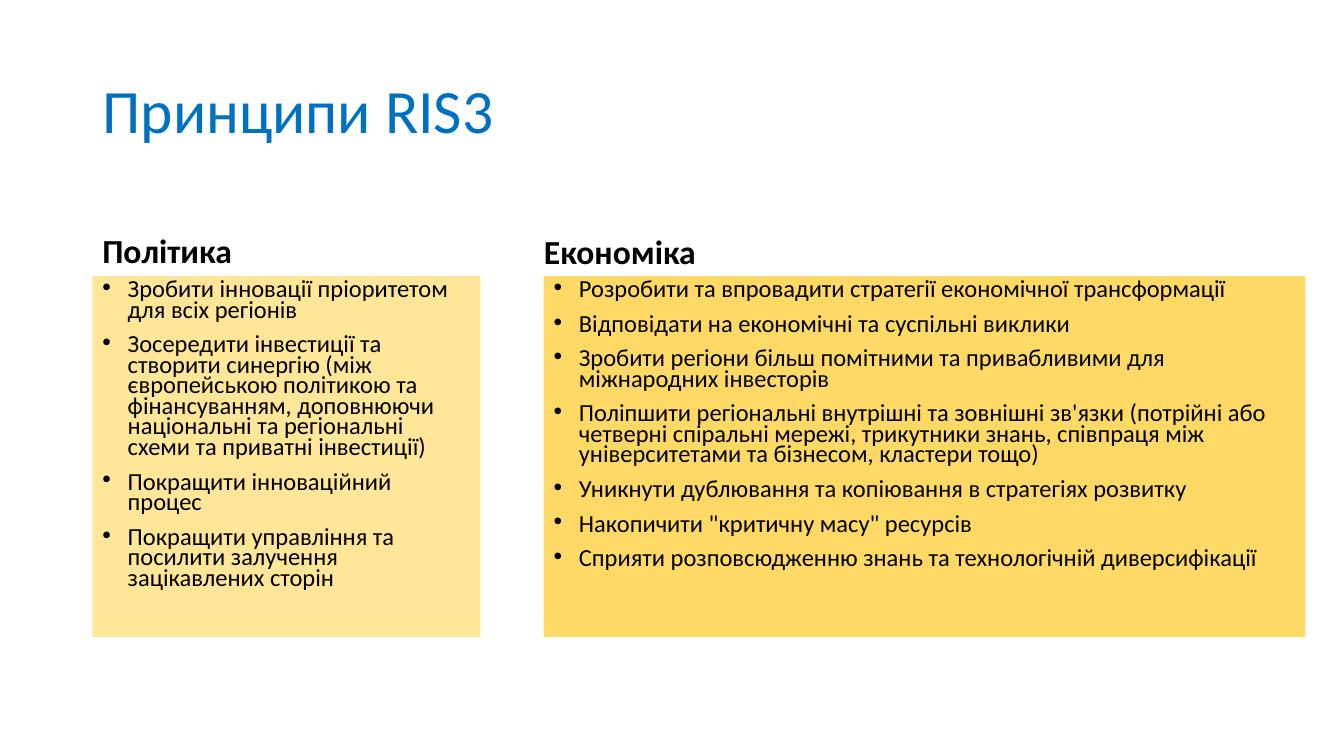
from lxml.etree import SubElement
from pptx import Presentation
from pptx.dml.color import RGBColor
from pptx.enum.shapes import MSO_SHAPE
from pptx.enum.text import MSO_ANCHOR, PP_ALIGN
from pptx.oxml.ns import qn
from pptx.util import Cm, Pt

TITLE = "Принципи RIS3"
COLORS = {"title": "0070C0", "text": "000000", "policy": "FFE699", "economy": "FFD966"}
COLUMNS = [
    {
        "heading": "Політика",
        "heading_left": 2.33,
        "heading_width": 14.33,
        "left": 2.33,
        "width": 9.78,
        "fill": "policy",
        "spacing": 0.9,
        "points": [
            "Зробити інновації пріоритетом для всіх регіонів",
            "Зосередити інвестиції та створити синергію (між європейською політикою та "
            "фінансуванням, доповнюючи національні та регіональні схеми та приватні інвестиції)",
            "Покращити інноваційний процес",
            "Покращити управління та посилити залучення зацікавлених сторін",
        ],
    },
    {
        "heading": "Економіка",
        "heading_left": 13.46,
        "heading_width": 18.08,
        "left": 13.7,
        "width": 19.2,
        "fill": "economy",
        "spacing": 0.8,
        "points": [
            "Розробити та впровадити стратегії економічної трансформації",
            "Відповідати на економічні та суспільні виклики",
            "Зробити регіони більш помітними та привабливими для міжнародних інвесторів",
            "Поліпшити регіональні внутрішні та зовнішні зв'язки (потрійні або четверні "
            "спіральні мережі, трикутники знань, співпраця між університетами та бізнесом, "
            "кластери тощо)",
            "Уникнути дублювання та копіювання в стратегіях розвитку",
            'Накопичити "критичну масу" ресурсів',
            "Сприяти розповсюдженню знань та технологічній диверсифікації",
        ],
    },
]
HEADING_TOP, HEADING_HEIGHT = 4.67, 2.29
PANEL_TOP, PANEL_HEIGHT = HEADING_TOP + HEADING_HEIGHT, 9.09
BULLET_INDENT = Cm(0.64)


def write(p, text, size, color="text", bold=False, spacing=0.9, before=10, bullet=False):
    p.alignment = PP_ALIGN.LEFT
    p.line_spacing = spacing
    p.space_before = Pt(before)
    r = p.add_run()
    r.text = text
    r.font.name = "Calibri"
    r.font.size = Pt(size)
    r.font.bold = bold
    r.font.color.rgb = RGBColor.from_string(COLORS[color])
    if bullet:
        pPr = p._p.get_or_add_pPr()
        pPr.set("marL", str(BULLET_INDENT))
        pPr.set("indent", str(-BULLET_INDENT))
        SubElement(pPr, qn("a:buFont"), typeface="Arial")
        SubElement(pPr, qn("a:buChar"), char="•")


prs = Presentation()
prs.slide_width, prs.slide_height = Cm(33.87), Cm(19.05)
s = prs.slides.add_slide(prs.slide_layouts[5])

title = s.shapes.title
title.left, title.top, title.width, title.height = Cm(2.33), Cm(1.01), Cm(29.21), Cm(3.68)
title.text_frame.vertical_anchor = MSO_ANCHOR.MIDDLE
write(title.text_frame.paragraphs[0], TITLE, 44, color="title", before=0)

for col in COLUMNS:
    box = s.shapes.add_textbox(Cm(col["heading_left"]), Cm(HEADING_TOP),
                               Cm(col["heading_width"]), Cm(HEADING_HEIGHT))
    tf = box.text_frame
    tf.word_wrap = True
    tf.vertical_anchor = MSO_ANCHOR.BOTTOM
    write(tf.paragraphs[0], col["heading"], 24, bold=True, spacing=col["spacing"])

    panel = s.shapes.add_shape(MSO_SHAPE.RECTANGLE, Cm(col["left"]), Cm(PANEL_TOP),
                               Cm(col["width"]), Cm(PANEL_HEIGHT))
    panel.shadow.inherit = False
    panel.fill.solid()
    panel.fill.fore_color.rgb = RGBColor.from_string(COLORS[col["fill"]])
    panel.line.fill.background()
    tf = panel.text_frame
    tf.word_wrap = True
    tf.vertical_anchor = MSO_ANCHOR.TOP
    for i, point in enumerate(col["points"]):
        p = tf.add_paragraph() if i else tf.paragraphs[0]
        write(p, point, 17.5, spacing=0.7, bullet=True)

prs.save("out.pptx")
